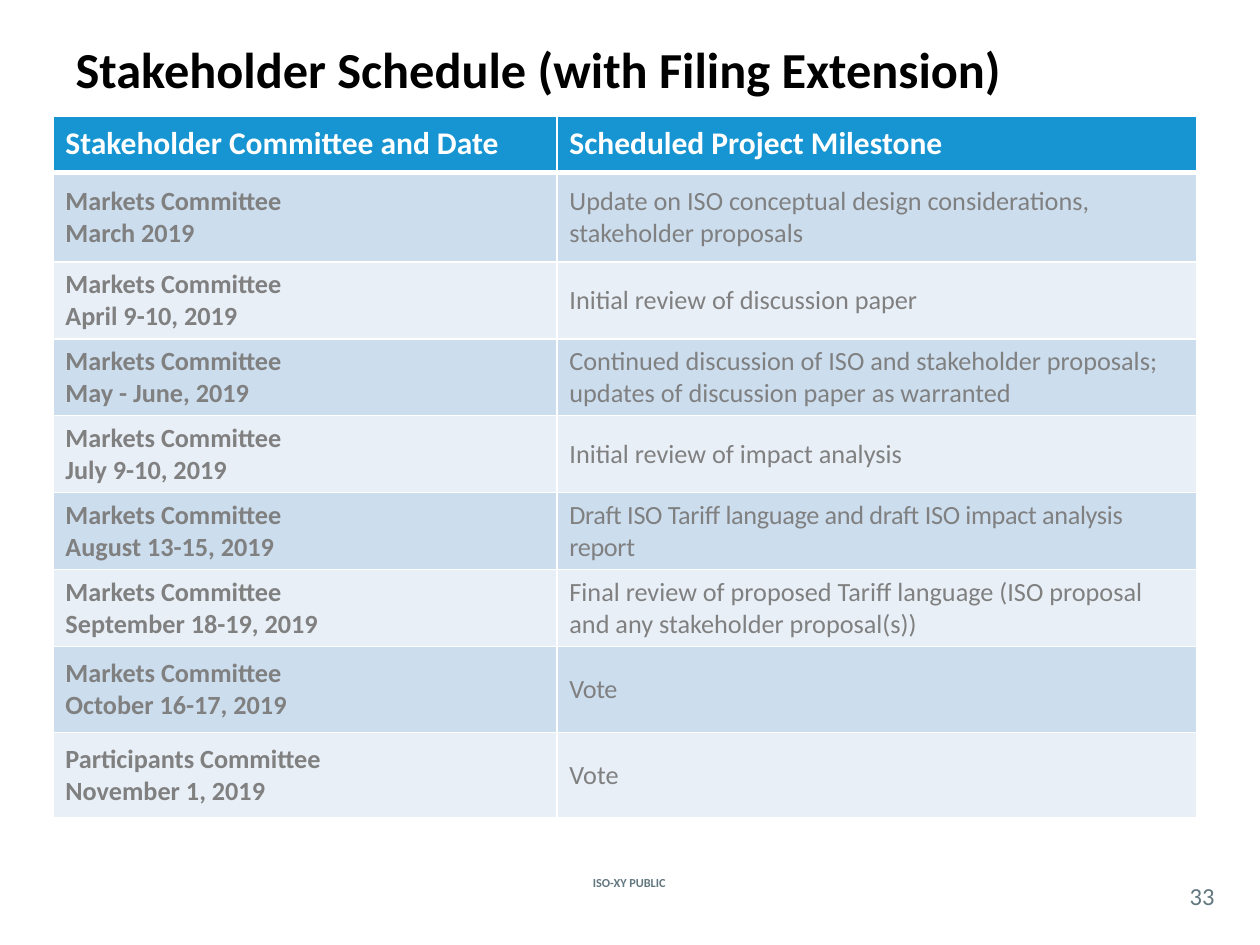
from dataclasses import dataclass

from lxml import etree
from pptx import Presentation
from pptx.dml.color import RGBColor
from pptx.enum.text import MSO_ANCHOR, MSO_AUTO_SIZE, PP_ALIGN
from pptx.oxml.ns import qn
from pptx.util import Pt

MIDDLE = MSO_ANCHOR.MIDDLE
NO_AUTOFIT = MSO_AUTO_SIZE.NONE
LEFT, CENTER = PP_ALIGN.LEFT, PP_ALIGN.CENTER
TITLE_ONLY = 5


@dataclass(frozen=True)
class Theme:
    """Colours, font and type sizes of the slide."""
    font: str = "Calibri"
    black: str = "000000"
    white: str = "FFFFFF"
    header: str = "1795D2"
    bands: tuple = ("CCDDEE", "E8EFF7")
    muted: str = "808080"
    footer: str = "62777F"
    title_size: float = 28.8
    header_size: float = 18
    cell_size: float = 15
    number_size: float = 14
    label_size: float = 7


THEME = Theme()
TIGHT = -20
HEADINGS = ("Stakeholder Committee and Date", "Scheduled Project Milestone")
MARKETS = "Markets Committee"
SCHEDULE = [
    (MARKETS, "March 2019",
     "Update on ISO conceptual design considerations, stakeholder proposals", 0),
    (MARKETS, "April 9-10, 2019", "Initial review of discussion paper", 0),
    (MARKETS, "May - June, 2019",
     "Continued discussion of ISO and stakeholder proposals; "
     "updates of discussion paper as warranted", 0),
    (MARKETS, "July 9-10, 2019", "Initial review of impact analysis", 0),
    (MARKETS, "August 13-15, 2019",
     "Draft ISO Tariff language and draft ISO impact analysis report", TIGHT),
    (MARKETS, "September 18-19, 2019",
     "Final review of proposed Tariff language "
     "(ISO proposal and any stakeholder proposal(s))", 0),
    (MARKETS, "October 16-17, 2019", "Vote", TIGHT),
    ("Participants Committee", "November 1, 2019", "Vote", 0),
]
COLUMN_WIDTHS = (288, 365.8)
ROW_HEIGHTS = (32.4, 51, *[44] * 5, 49, 49)


def write(frame, *lines, size, color, bold=False, align=LEFT, tracking=0):
    """Write each line as a paragraph with one shared format."""
    for index, line in enumerate(lines):
        paragraph = frame.paragraphs[0] if index == 0 else frame.add_paragraph()
        paragraph.alignment = align
        run = paragraph.add_run()
        run.text = line
        run.font.name = THEME.font
        run.font.size = Pt(size)
        run.font.bold = bold
        run.font.color.rgb = RGBColor.from_string(color)
        if tracking:
            run.font._element.set("spc", str(tracking))


def add_title(slide, text):
    """Place and fill the title placeholder."""
    title = slide.shapes.title
    title.left, title.top, title.width, title.height = Pt(36), Pt(18), Pt(648), Pt(42)
    title.text_frame.auto_size = NO_AUTOFIT
    title.text_frame.vertical_anchor = MIDDLE
    write(title.text_frame, text, size=THEME.title_size, color=THEME.black, bold=True)


def add_footer_text(slide, text, left, top, width, height, **style):
    """Add a centred footer text box without insets."""
    footer = slide.shapes.add_textbox(Pt(left), Pt(top), Pt(width), Pt(height))
    frame = footer.text_frame
    frame.word_wrap = True
    frame.vertical_anchor = MIDDLE
    frame.margin_left = frame.margin_right = frame.margin_top = frame.margin_bottom = 0
    write(frame, text, color=THEME.footer, align=CENTER, **style)


def add_border(cell, side, width):
    """Draw one white border of a cell."""
    border = etree.SubElement(cell._tc.get_or_add_tcPr(), qn(f"a:ln{side}"),
                              w=str(Pt(width)))
    fill = etree.SubElement(border, qn("a:solidFill"))
    etree.SubElement(fill, qn("a:srgbClr"), val=THEME.white)


def style_cell(cell, fill, top=1, bottom=1):
    """Set the borders, fill and anchor of a cell."""
    for side, width in (("L", 1), ("R", 1), ("T", top), ("B", bottom)):
        add_border(cell, side, width)
    cell.fill.solid()
    cell.fill.fore_color.rgb = RGBColor.from_string(fill)
    cell.vertical_anchor = MIDDLE


def add_schedule(slide):
    """Add the table of committee dates and milestones."""
    table = slide.shapes.add_table(
        len(ROW_HEIGHTS), len(COLUMN_WIDTHS), Pt(30.2), Pt(66.2),
        Pt(sum(COLUMN_WIDTHS)), Pt(sum(ROW_HEIGHTS))).table
    table.horz_banding = False
    for column, width in zip(table.columns, COLUMN_WIDTHS):
        column.width = Pt(width)
    for row, height in zip(table.rows, ROW_HEIGHTS):
        row.height = Pt(height)
    for column, heading in enumerate(HEADINGS):
        cell = table.cell(0, column)
        style_cell(cell, THEME.header, bottom=3)
        write(cell.text_frame, heading, size=THEME.header_size,
              color=THEME.white, bold=True)
    for row, (committee, date, milestone, tracking) in enumerate(SCHEDULE, 1):
        meeting_cell, milestone_cell = table.cell(row, 0), table.cell(row, 1)
        for cell in (meeting_cell, milestone_cell):
            style_cell(cell, THEME.bands[(row - 1) % 2], top=3 if row == 1 else 1)
        write(meeting_cell.text_frame, committee, date, size=THEME.cell_size,
              color=THEME.muted, bold=True)
        write(milestone_cell.text_frame, milestone, size=THEME.cell_size,
              color=THEME.muted, tracking=tracking)


def main():
    """Build and save the schedule slide."""
    deck = Presentation()
    deck.slide_width, deck.slide_height = Pt(720), Pt(540)
    slide = deck.slides.add_slide(deck.slide_layouts[TITLE_ONLY])
    add_footer_text(slide, "ISO-XY PUBLIC", 306.7, 494.6, 105.8, 19.4,
                    size=THEME.label_size, bold=True)
    add_title(slide, "Stakeholder Schedule (with Filing Extension)")
    add_footer_text(slide, "33", 671.8, 501.1, 30.2, 20.9, size=THEME.number_size)
    add_schedule(slide)
    deck.save("out.pptx")


if __name__ == "__main__":
    main()
